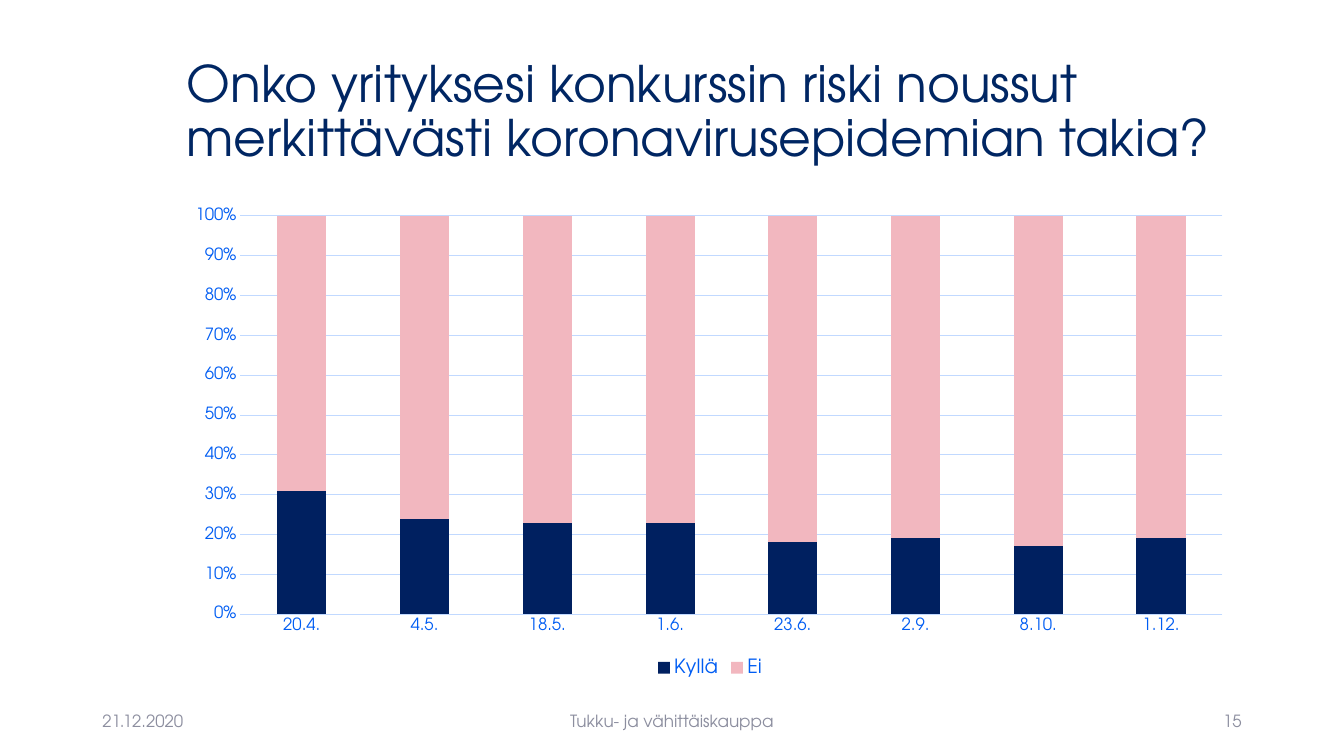
from dataclasses import dataclass

from lxml.etree import SubElement
from pptx import Presentation
from pptx.chart.data import CategoryChartData as Data
from pptx.dml.color import RGBColor as Color
from pptx.enum.chart import XL_CHART_TYPE as Kind, XL_LEGEND_POSITION as Spot
from pptx.enum.chart import XL_TICK_MARK as Tick
from pptx.enum.text import MSO_ANCHOR as Anchor, MSO_AUTO_SIZE as Fit, PP_ALIGN as Align
from pptx.oxml.ns import qn
from pptx.util import Pt


@dataclass(frozen=True)
class Theme:
    face: str = "TeX Gyre Adventor"
    navy: str = "002663"
    blue: str = "005DF3"
    pale: str = "C1D9FF"
    gray: str = "8C8E9F"
    yes: str = "002060"
    no: str = "F2B7BF"
    head: int = 36
    key: int = 14
    small: int = 12
    tiny: int = 10


class Page:
    def __init__(self, deck, theme):
        self.theme = theme
        self.slide = deck.slides.add_slide(deck.slide_layouts[5])

    def style(self, font, size, color):
        font.name = self.theme.face
        font.size = Pt(size)
        font.color.rgb = Color.from_string(color)

    def label(self, shape, text, size, color, align):
        frame = shape.text_frame
        frame.text = text
        frame.word_wrap = True
        frame.auto_size = Fit.NONE
        frame.vertical_anchor = Anchor.MIDDLE
        para = frame.paragraphs[0]
        para.alignment = align
        self.style(para.font, size, color)
        return para

    def title(self, text, left, top, width, height):
        shape = self.slide.shapes.title
        shape.left, shape.top = Pt(left), Pt(top)
        shape.width, shape.height = Pt(width), Pt(height)
        para = self.label(shape, text, self.theme.head, self.theme.navy, Align.LEFT)
        para.line_spacing = 0.9

    def foot(self, text, left, width, align):
        box = self.slide.shapes.add_textbox(Pt(left), Pt(500.5), Pt(width), Pt(28.8))
        self.label(box, text, self.theme.small, self.theme.gray, align)

    def line(self, line):
        line.color.rgb = Color.from_string(self.theme.pale)
        line.width = Pt(0.75)

    def axis(self, axis):
        axis.major_tick_mark = axis.minor_tick_mark = Tick.NONE
        self.style(axis.tick_labels.font, self.theme.small, self.theme.blue)

    def place(self, chart, **parts):
        area = chart.plots[0]._element.getparent()
        for old in area.findall(qn("c:layout")):
            area.remove(old)
        layout = SubElement(area, qn("c:layout"))
        area.insert(0, layout)
        manual = SubElement(layout, qn("c:manualLayout"))
        rules = {"layoutTarget": "inner", "xMode": "edge", "yMode": "edge", **parts}
        for tag, val in rules.items():
            SubElement(manual, qn("c:" + tag)).set("val", str(val))

    def stack(self, cats, rows, left, top, width, height):
        data = Data(number_format="0")
        data.categories = cats
        for name, vals, _ in rows:
            data.add_series(name, vals)
        chart = self.slide.shapes.add_chart(
            Kind.COLUMN_STACKED_100, Pt(left), Pt(top), Pt(width), Pt(height), data
        ).chart
        self.style(chart.font, self.theme.tiny, self.theme.navy)
        chart.has_title = False
        chart.has_legend = True
        chart.legend.position = Spot.BOTTOM
        chart.legend.include_in_layout = False
        self.style(chart.legend.font, self.theme.key, self.theme.blue)

        plot = chart.plots[0]
        plot.gap_width, plot.overlap = 150, 100
        plot.vary_by_categories = False
        for bar, (_, _, color) in zip(plot.series, rows):
            bar.format.fill.solid()
            bar.format.fill.fore_color.rgb = Color.from_string(color)

        base, side = chart.category_axis, chart.value_axis
        self.axis(base)
        self.line(base.format.line)
        self.axis(side)
        side.format.line.fill.background()
        side.minimum_scale, side.maximum_scale, side.major_unit = 0, 1, 0.1
        side.has_major_gridlines = True
        self.line(side.major_gridlines.format.line)
        side.tick_labels.number_format = "0%"
        side.tick_labels.number_format_is_linked = False
        self.place(chart, x=0.06, y=0.03, w=0.92, h=0.83)


def main():
    deck = Presentation()
    deck.slide_width, deck.slide_height = Pt(960), Pt(540)
    theme = Theme()
    page = Page(deck, theme)
    page.title(
        "Onko yrityksesi konkurssin riski noussut merkittävästi koronavirusepidemian takia?",
        126, 28.8, 762.5, 104.4,
    )
    yes = [31, 24, 23, 23, 18, 19, 17, 19]
    no = [100 - val for val in yes]
    cats = ["20.4.", "4.5.", "18.5.", "1.6.", "23.6.", "2.9.", "8.10.", "1.12."]
    rows = [("Kyllä", yes, theme.yes), ("Ei", no, theme.no)]
    page.stack(cats, rows, 126, 144, 762.5, 342.7)
    page.foot("21.12.2020", 66, 216, Align.LEFT)
    page.foot("Tukku- ja vähittäiskauppa", 318, 324, Align.CENTER)
    page.foot("15", 678, 216, Align.RIGHT)
    deck.save("out.pptx")


if __name__ == "__main__":
    main()
